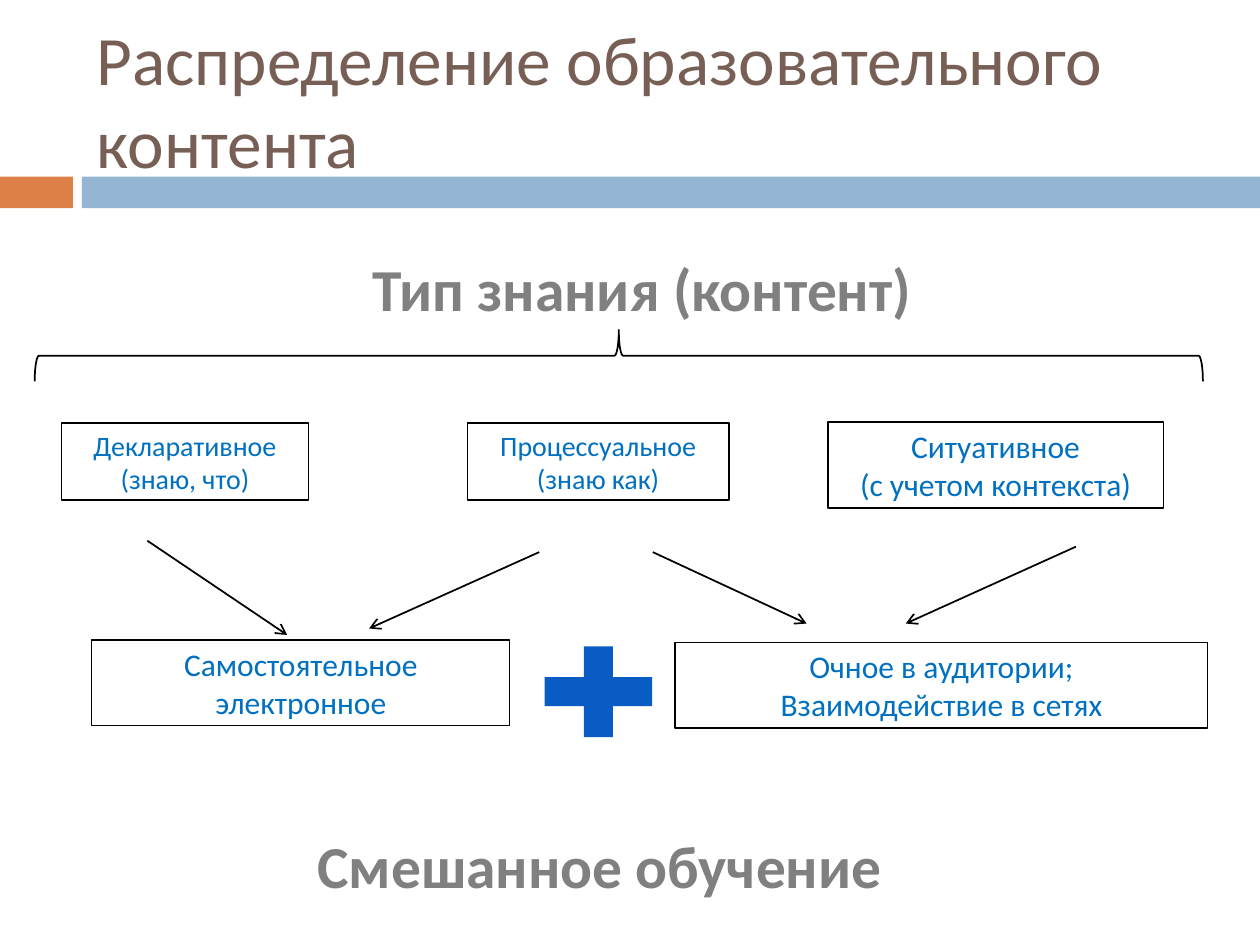
import pptx
import pptx.util
import pptx.dml.color
import pptx.enum.shapes
import pptx.enum.text
import pptx.oxml
import pptx.oxml.ns

Cm = pptx.util.Cm
Pt = pptx.util.Pt
SHAPE = pptx.enum.shapes.MSO_SHAPE
ALIGN = pptx.enum.text.PP_ALIGN
ANCHOR = pptx.enum.text.MSO_ANCHOR

COLORS = {
    "title": "775F55",
    "accent": "DD8047",
    "band": "94B6D2",
    "heading": "808080",
    "label": "0070C0",
    "plus": "095CC4",
    "line": "000000",
    "paper": "FFFFFF",
}
FONT = "Calibri"


def rgb(name):
    return pptx.dml.color.RGBColor.from_string(COLORS[name])


def add_figure(slide, kind, left, top, width, height, fill=None, line=None):
    """Preset shape; line is a width in points."""
    figure = slide.shapes.add_shape(kind, Cm(left), Cm(top), Cm(width), Cm(height))
    figure.shadow.inherit = False
    if fill:
        figure.fill.solid()
        figure.fill.fore_color.rgb = rgb(fill)
    else:
        figure.fill.background()
    if line:
        figure.line.color.rgb = rgb("line")
        figure.line.width = Pt(line)
    else:
        figure.line.fill.background()
    return figure


def write(frame, lines, size, color, align=ALIGN.LEFT, bold=False):
    for number, line in enumerate(lines):
        paragraph = frame.add_paragraph() if number else frame.paragraphs[0]
        paragraph.text = line
        paragraph.alignment = align
        paragraph.font.name = FONT
        paragraph.font.size = Pt(size)
        paragraph.font.bold = bold
        paragraph.font.color.rgb = rgb(color)


def set_insets(frame):
    frame.margin_left = frame.margin_right = Cm(0.18)
    frame.margin_top = frame.margin_bottom = Cm(0.1)


def add_heading(slide, text, left, top, width):
    heading = slide.shapes.add_textbox(Cm(left), Cm(top), Cm(width), Cm(1.63))
    set_insets(heading.text_frame)
    heading.text_frame.word_wrap = False
    write(heading.text_frame, [text], 34, "heading", bold=True)


def add_label(slide, lines, size, left, top, width, height):
    label = add_figure(slide, SHAPE.RECTANGLE, left, top, width, height, line=0.75)
    set_insets(label.text_frame)
    label.text_frame.word_wrap = True
    label.text_frame.vertical_anchor = ANCHOR.TOP
    write(label.text_frame, lines, size, "label", ALIGN.CENTER)


def add_arrow(slide, x1, y1, x2, y2):
    arrow = slide.shapes.add_connector(
        pptx.enum.shapes.MSO_CONNECTOR.STRAIGHT, Cm(x1), Cm(y1), Cm(x2), Cm(y2))
    arrow.line.color.rgb = rgb("line")
    arrow.line.width = Pt(1)
    tail = pptx.oxml.parse_xml(
        f'<a:tailEnd {pptx.oxml.ns.nsdecls("a")} type="arrow"/>')
    arrow.line._get_or_add_ln().append(tail)
    no_shadow = pptx.oxml.parse_xml(f'<a:effectLst {pptx.oxml.ns.nsdecls("a")}/>')
    arrow._element.spPr.append(no_shadow)


def header(slide, left, top, width, height):
    # Colour band along the bottom edge
    band_height, accent_width, band_start = 0.64, 1.47, 1.65
    band_top = top + height - band_height
    add_figure(slide, SHAPE.RECTANGLE, left, band_top, accent_width, band_height,
               fill="accent")
    add_figure(slide, SHAPE.RECTANGLE, left + band_start, band_top,
               width - band_start, band_height, fill="band")
    # Title
    title = slide.shapes.add_textbox(
        Cm(left + 1.7), Cm(top + 0.64), Cm(22.66), Cm(2.74)).text_frame
    title.word_wrap = True
    title.vertical_anchor = ANCHOR.MIDDLE
    write(title, ["Распределение образовательного контента"], 39.6, "title")


def knowledge_types(slide, left, top, width):
    add_heading(slide, "Тип знания (контент)", left + 6.64, top, 14.35)
    # Brace over the whole width, a tall shape turned on its side
    depth = 1.04
    brace = add_figure(slide, SHAPE.RIGHT_BRACE,
                       left + (width - depth) / 2,
                       top + 1.67 + (depth - width) / 2,
                       depth, width, fill="paper", line=1)
    brace.rotation = 270
    # Kinds of knowledge
    for lines, size, x, y, label_width, height in (
        (("Декларативное", "(знаю, что)"), 16, 0.54, 3.55, 4.98, 1.55),
        (("Процессуальное", "(знаю как)"), 16, 8.72, 3.55, 5.28, 1.55),
        (("Ситуативное", "(с учетом контекста)"), 18, 15.99, 3.53, 6.76, 1.73),
    ):
        add_label(slide, lines, size, left + x, top + y, label_width, height)


def links(slide, left, top):
    for x1, y1, x2, y2 in (
        (0, 0, 2.82, 1.9),
        (7.9, 0.23, 4.47, 1.77),
        (10.19, 0.23, 13.29, 1.67),
        (18.72, 0.12, 15.29, 1.67),
    ):
        add_arrow(slide, left + x1, top + y1, left + x2, top + y2)


def learning_forms(slide, left, top):
    add_label(slide, ("Самостоятельное", "электронное"), 18,
              left, top + 0.2, 8.43, 1.73)
    add_figure(slide, SHAPE.MATH_PLUS, left + 8.74, top, 2.95, 2.49, fill="plus")
    add_label(slide, ("Очное в аудитории;", "Взаимодействие в сетях"), 18,
              left + 11.76, top + 0.25, 10.74, 1.73)
    add_heading(slide, "Смешанное обучение", left + 4.37, top + 3.91, 14.27)


def main():
    deck = pptx.Presentation()
    deck.slide_width, deck.slide_height = Cm(25.4), Cm(19.05)
    slide = deck.slides.add_slide(deck.slide_layouts[6])
    header(slide, 0, 0, 25.4, 4.2)
    knowledge_types(slide, 0.7, 4.98, 23.55)
    links(slide, 2.97, 10.9)
    learning_forms(slide, 1.85, 12.7)
    deck.save("out.pptx")


if __name__ == "__main__":
    main()
